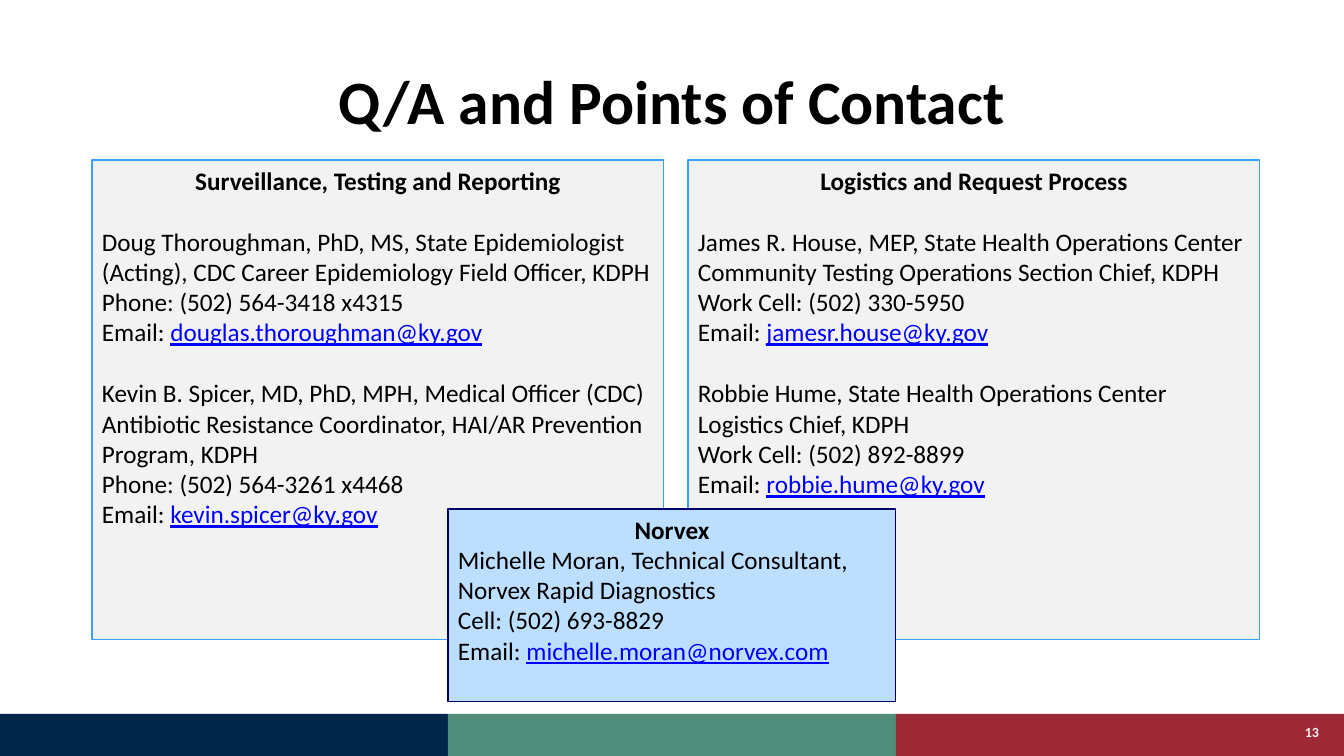
from dataclasses import dataclass

from pptx import Presentation, util as u
from pptx.dml.color import RGBColor
from pptx.enum import shapes, text

PAGE_W, PAGE_H = 1344, 756
EMU_PER_PX = u.Inches(7.5) / PAGE_H
FONT = "Calibri"
BODY_SIZE = 18
BLANK_LINE = 22  # points, one line of body text
COLOURS = {
    "navy": "002649", "green": "518D7B", "red": "9F2936",
    "grey": "F2F2F2", "sky": "3AA0FF", "pale_blue": "BDDFFF",
    "deep_blue": "000066", "black": "000000", "link": "0000FF",
}
Align, Anchor = text.PP_ALIGN, text.MSO_ANCHOR


@dataclass(frozen=True)
class Area:
    left: int
    top: int
    width: int
    height: int

    def emu(self) -> list[int]:
        return [round(px * EMU_PER_PX)
                for px in (self.left, self.top, self.width, self.height)]


@dataclass(frozen=True)
class Contact:
    lines: tuple[str, ...]
    email: str


@dataclass(frozen=True)
class Panel:
    area: Area
    fill: str
    line: str
    heading: str
    contacts: tuple[Contact, ...]
    gap: int = BLANK_LINE


PANEL_TOP, PANEL_W, PANEL_H = 160, 572, 480
LEFT, RIGHT = 92, 688
THIRD = PAGE_W // 3
FOOTER_TOP = 714

PANELS = (
    Panel(Area(RIGHT, PANEL_TOP, PANEL_W, PANEL_H), "grey", "sky",
          "Logistics and Request Process", (
              Contact(("James R. House, MEP, State Health Operations Center "
                       "Community Testing Operations Section Chief, KDPH",
                       "Work Cell: (502) 330-5950"), "jamesr.house@ky.gov"),
              Contact(("Robbie Hume, State Health Operations Center "
                       "Logistics Chief, KDPH",
                       "Work Cell: (502) 892-8899"), "robbie.hume@ky.gov"))),
    Panel(Area(LEFT, PANEL_TOP, PANEL_W, PANEL_H), "grey", "sky",
          "Surveillance, Testing and Reporting", (
              Contact(("Doug Thoroughman, PhD, MS, State Epidemiologist "
                       "(Acting), CDC Career Epidemiology Field Officer, KDPH",
                       "Phone: (502) 564-3418 x4315"),
                      "douglas.thoroughman@ky.gov"),
              Contact(("Kevin B. Spicer, MD, PhD, MPH, Medical Officer (CDC)",
                       "Antibiotic Resistance Coordinator, HAI/AR Prevention "
                       "Program, KDPH",
                       "Phone: (502) 564-3261 x4468"),
                      "kevin.spicer@ky.gov"))),
    Panel(Area(THIRD, 509, THIRD, 193), "pale_blue", "deep_blue",
          "Norvex", (
              Contact(("Michelle Moran, Technical Consultant, "
                       "Norvex Rapid Diagnostics",
                       "Cell: (502) 693-8829"), "michelle.moran@norvex.com"),),
          gap=0),
)


def colour(name: str) -> RGBColor:
    return RGBColor.from_string(COLOURS[name])


def add_span(para, words: str, size: int = BODY_SIZE, bold: bool = False,
             tint: str = "black", underline: bool = False) -> None:
    span = para.add_run()
    span.text = words
    font = span.font
    font.name, font.size, font.bold = FONT, u.Pt(size), bold
    font.underline = underline
    font.color.rgb = colour(tint)


def add_rectangle(page, area: Area, fill: str, line: str | None = None):
    box = page.shapes.add_shape(shapes.MSO_SHAPE.RECTANGLE, *area.emu())
    box.shadow.inherit = False
    box.fill.solid()
    box.fill.fore_color.rgb = colour(fill)
    if line:
        box.line.color.rgb = colour(line)
        box.line.width = u.Pt(0.75)
    else:
        box.line.fill.background()
    return box


def add_label(page, area: Area, words: str, align: Align, size: int,
              tint: str, spacing: float = 1.0) -> None:
    """Add one bold, vertically centred line of text."""
    frame = page.shapes.add_textbox(*area.emu()).text_frame
    frame.word_wrap = True
    frame.vertical_anchor = Anchor.MIDDLE
    para = frame.paragraphs[0]
    para.alignment, para.line_spacing = align, spacing
    add_span(para, words, size, True, tint)


def add_panel(page, panel: Panel) -> None:
    frame = add_rectangle(page, panel.area, panel.fill, panel.line).text_frame
    frame.word_wrap = True
    frame.vertical_anchor = Anchor.TOP
    heading = frame.paragraphs[0]
    heading.alignment = Align.CENTER
    add_span(heading, panel.heading, bold=True)
    for contact in panel.contacts:
        for index, words in enumerate((*contact.lines, "Email: ")):
            para = frame.add_paragraph()
            para.alignment = Align.LEFT
            para.space_before = u.Pt(0 if index else panel.gap)
            add_span(para, words)
        add_span(para, contact.email, tint="link", underline=True)


def main() -> None:
    deck = Presentation()
    _, _, deck.slide_width, deck.slide_height = Area(0, 0, PAGE_W, PAGE_H).emu()
    page = deck.slides.add_slide(deck.slide_layouts[6])
    for index, fill in enumerate(("navy", "green", "red")):
        add_rectangle(page, Area(index * THIRD, FOOTER_TOP, THIRD,
                                 PAGE_H - FOOTER_TOP), fill)
    add_label(page, Area(LEFT, 40, 1160, 130), "Q/A and Points of Contact",
              Align.CENTER, 44, "black", 0.9)
    add_label(page, Area(1252, 718, 77, 28), "13", Align.RIGHT, 10, "grey")
    for panel in PANELS:
        add_panel(page, panel)
    deck.save("out.pptx")


if __name__ == "__main__":
    main()
